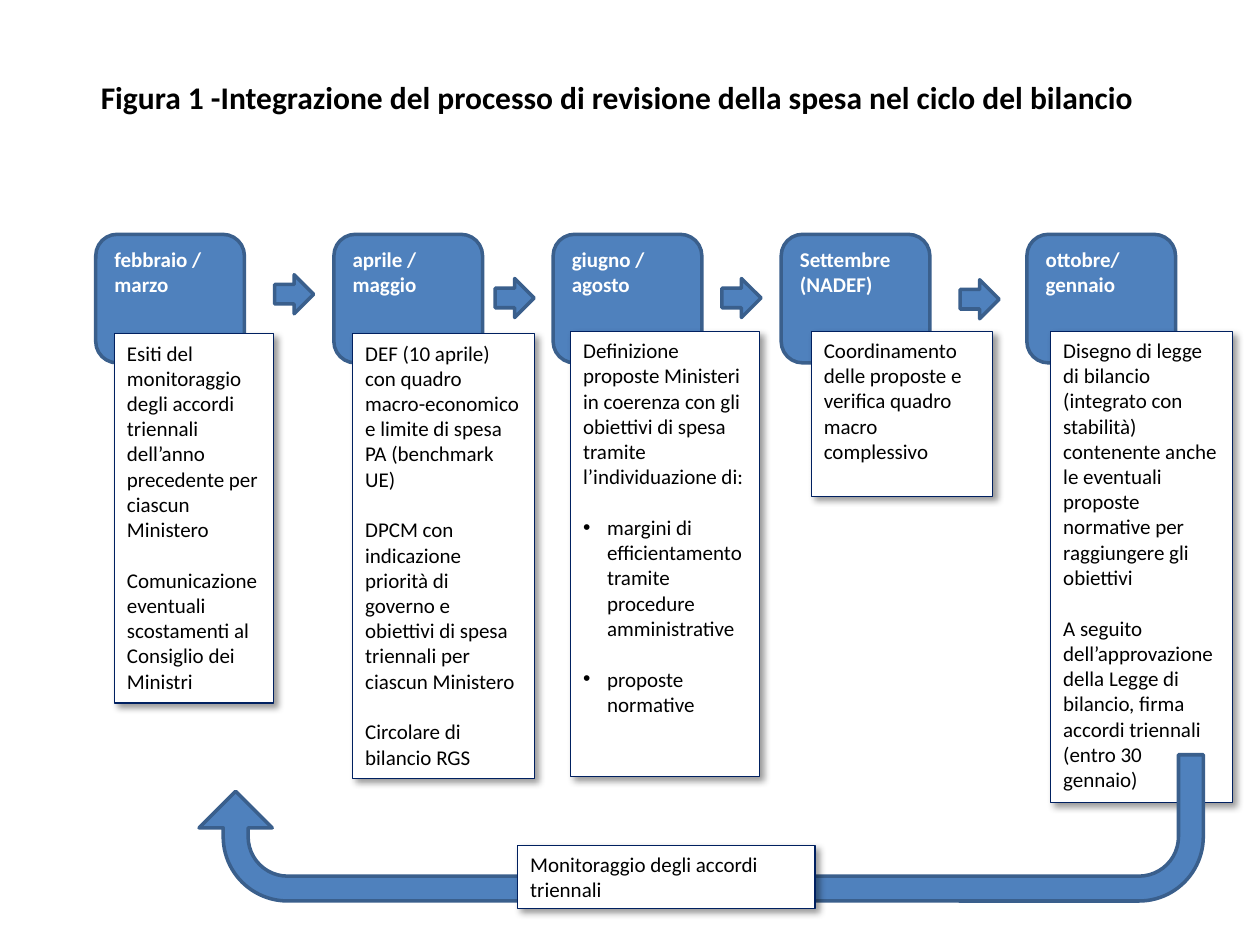
from dataclasses import dataclass

from lxml import etree
from pptx import Presentation
from pptx.dml.color import RGBColor
from pptx.enum.shapes import MSO_SHAPE
from pptx.enum.text import MSO_ANCHOR, MSO_AUTO_SIZE, PP_ALIGN
from pptx.oxml import parse_xml
from pptx.oxml.ns import nsdecls, qn
from pptx.util import Emu, Inches, Pt

ROUND = MSO_SHAPE.ROUNDED_RECTANGLE
RECT = MSO_SHAPE.RECTANGLE
ARROW = MSO_SHAPE.RIGHT_ARROW
UTURN = MSO_SHAPE.U_TURN_ARROW
TOP = MSO_ANCHOR.TOP
LEFT = PP_ALIGN.LEFT
JUSTIFY = PP_ALIGN.JUSTIFY
FIXED = MSO_AUTO_SIZE.NONE

BLUE = RGBColor(0x4F, 0x81, 0xBD)
STEEL = RGBColor(0x3A, 0x5F, 0x8C)
NAVY = RGBColor(0x00, 0x20, 0x60)
WHITE = RGBColor(0xFF, 0xFF, 0xFF)
BLACK = RGBColor(0x00, 0x00, 0x00)

WIDTH, HEIGHT = Inches(10), Inches(7.5)
FONT = "Calibri"
GAP = Pt(14.65)
HANG = Inches(0.19)
SHADOW = (
    f'<a:outerShdw {nsdecls("a")} blurRad="{Pt(4)}" dist="{Pt(3)}" '
    'dir="2700000" algn="tl" rotWithShape="0">'
    '<a:srgbClr val="000000"><a:alpha val="40000"/></a:srgbClr></a:outerShdw>'
)


@dataclass(frozen=True)
class Area:
    """Left, top, width and height in percent of the slide."""
    x: float
    y: float
    w: float
    h: float

    def lengths(self) -> tuple[Emu, Emu, Emu, Emu]:
        return (Emu(round(WIDTH * self.x / 100)), Emu(round(HEIGHT * self.y / 100)),
                Emu(round(WIDTH * self.w / 100)), Emu(round(HEIGHT * self.h / 100)))


@dataclass(frozen=True)
class Phase:
    x: float
    month: str
    note: Area
    lines: tuple[str, ...]
    points: tuple[str, ...] = ()


PHASES = (
    Phase(7.6, "febbraio / marzo", Area(9.1, 35.33, 12.6, 39.07), (
        "Esiti del monitoraggio degli accordi triennali dell’anno precedente "
        "per ciascun Ministero",
        "Comunicazione eventuali scostamenti al Consiglio dei Ministri")),
    Phase(26.5, "aprile / maggio", Area(28, 35.33, 14.4, 47.07), (
        "DEF (10 aprile) con quadro macro-economico e limite di spesa PA (benchmark UE)",
        "DPCM con indicazione priorità di governo e obiettivi di spesa triennali "
        "per ciascun Ministero",
        "Circolare di bilancio RGS")),
    Phase(43.9, "giugno / agosto", Area(45.3, 35.07, 15, 47.07), (
        "Definizione proposte Ministeri in coerenza con gli obiettivi di spesa "
        "tramite l’individuazione di:",), (
        "margini di efficientamento tramite procedure amministrative",
        "proposte normative")),
    Phase(62, "Settembre (NADEF)", Area(64.4, 35.07, 14.4, 17.47), (
        "Coordinamento delle proposte e verifica quadro macro complessivo",)),
    Phase(81.5, "ottobre/ gennaio", Area(83.4, 35.07, 14.4, 49.87), (
        "Disegno di legge di bilancio (integrato con stabilità) contenente anche "
        "le eventuali proposte normative per raggiungere gli obiettivi",
        "A seguito dell’approvazione della Legge di bilancio, firma accordi "
        "triennali (entro 30 gennaio)")),
)
ARROWS = ((21.8, 29.07), (39.3, 29.47), (57.3, 29.47), (76.2, 29.6))


def write(frame, *lines: str, points=(), size=12, color=BLACK, bold=False,
          align=LEFT, spacing=1.0) -> None:
    frame.word_wrap = True
    frame.auto_size = FIXED
    frame.vertical_anchor = TOP
    for i, text in enumerate((*lines, *points)):
        par = frame.add_paragraph() if i else frame.paragraphs[0]
        par.alignment = align
        par.line_spacing = spacing
        par.space_before = GAP if i else Pt(0)
        run = par.add_run()
        run.text = text
        font = run.font
        font.name, font.size, font.bold = FONT, Pt(size), bold
        font.color.rgb = color
        if i >= len(lines):
            props = par._p.get_or_add_pPr()
            props.set("marL", str(HANG))
            props.set("indent", str(-HANG))
            etree.SubElement(props, qn("a:buFont")).set("typeface", "Arial")
            etree.SubElement(props, qn("a:buChar")).set("char", "•")


def draw(slide, kind, area: Area, fill=BLUE, edge=STEEL, weight=2.0):
    shape = slide.shapes.add_shape(kind, *area.lengths())
    shape.fill.solid()
    shape.fill.fore_color.rgb = fill
    shape.line.color.rgb = edge
    shape.line.width = Pt(weight)
    shape.shadow.inherit = False
    return shape


def note(slide, area: Area, *lines: str, points=()) -> None:
    shape = draw(slide, RECT, area, WHITE, NAVY, 0.75)
    shape.element.spPr.find(qn("a:effectLst")).append(parse_xml(SHADOW))
    write(shape.text_frame, *lines, points=points)


def head(slide, text: str) -> None:
    title = slide.shapes.title
    title.left, title.top, title.width, title.height = Area(5.1, 8, 90.6, 6).lengths()
    write(title.text_frame, text, size=18, bold=True, align=JUSTIFY, spacing=0.9)
    title.text_frame.margin_left = Inches(0.29)
    title.text_frame.margin_top = Inches(0.05)


def main() -> None:
    deck = Presentation()
    deck.slide_width, deck.slide_height = WIDTH, HEIGHT
    slide = deck.slides.add_slide(deck.slide_layouts[5])
    head(slide, "Figura 1 -Integrazione del processo di revisione della spesa "
                "nel ciclo del bilancio")
    for phase in PHASES:
        card = draw(slide, ROUND, Area(phase.x, 24.8, 11.8, 13.6))
        write(card.text_frame, phase.month, color=WHITE, bold=True)
    for x, y in ARROWS:
        draw(slide, ARROW, Area(x, y, 3.1, 4.13))
    for phase in PHASES:
        note(slide, phase.note, *phase.lines, points=phase.points)
    loop = draw(slide, UTURN, Area(15.8, 79.87, 79.7, 15.47))
    loop.rotation = 180
    for i, value in enumerate((0.17, 0.25, 0.25, 0.44, 0.75)):
        loop.adjustments[i] = value
    note(slide, Area(41.1, 89.47, 23.6, 6.67), "Monitoraggio degli accordi triennali")
    deck.save("out.pptx")


if __name__ == "__main__":
    main()
